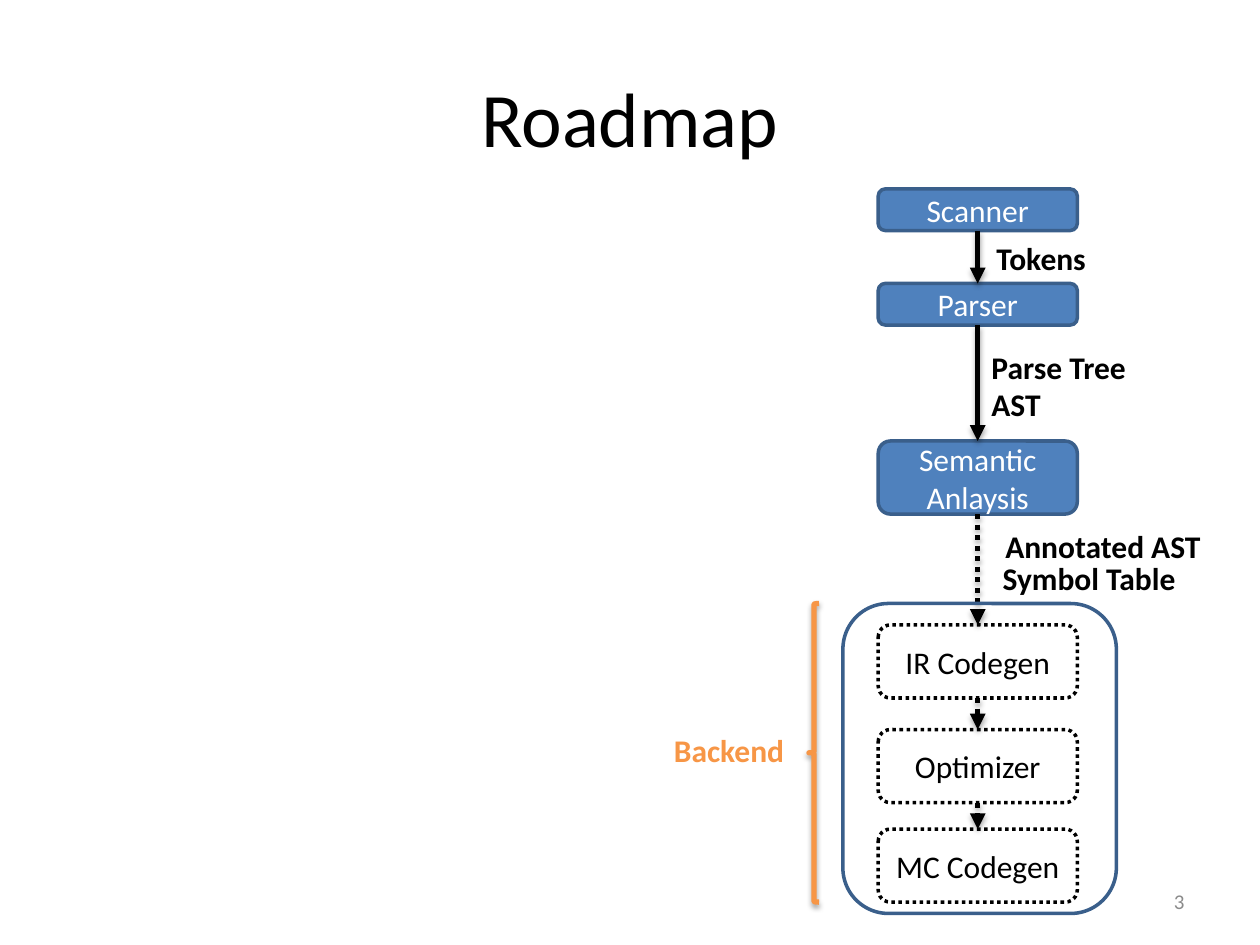
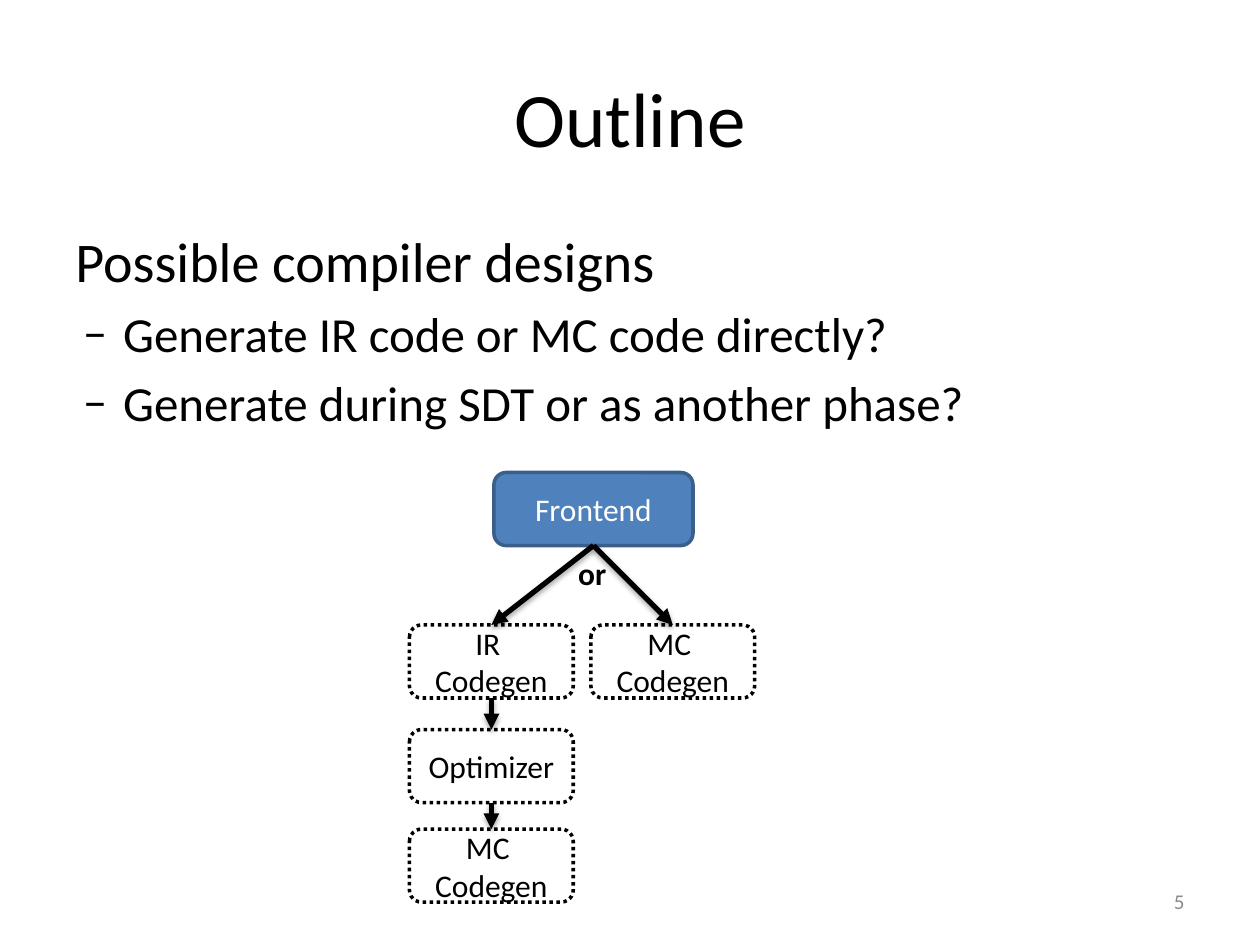
from lxml.etree import SubElement
from pptx import Presentation
from pptx.dml.color import RGBColor
from pptx.enum.dml import MSO_LINE
from pptx.enum.shapes import MSO_CONNECTOR, MSO_SHAPE
from pptx.enum.text import MSO_ANCHOR, MSO_AUTO_SIZE, PP_ALIGN
from pptx.oxml.ns import qn
from pptx.util import Inches, Pt

FONT = "Calibri"
BLACK, WHITE, GREY = "000000", "FFFFFF", "8B8B8B"
BLUE, DARK_BLUE, ORANGE = "4F81BD", "3A5F8B", "F79646"
BOX_HEIGHT, THIN_HEIGHT = 0.58, 0.33
IR_TOP, OPTIMIZER_TOP, MC_TOP = 4.96, 5.79, 6.58
BOTTOM_SIDE, TOP_SIDE = 2, 0

# Boxes: name -> (lines, left, top, width, height, is dotted)
# Arrows: (from, to, is dotted); labels: (lines, left, top, width, height, colour)
PAGES = [
    {
        "title": "Roadmap",
        "number": "3",
        "boxes": {
            "scanner": (["Scanner"], 6.97, 1.5, 1.58, THIN_HEIGHT, False),
            "parser": (["Parser"], 6.97, 2.25, 1.58, THIN_HEIGHT, False),
            "semantic": (["Semantic Anlaysis"], 6.97, 3.5, 1.58, BOX_HEIGHT, False),
            "ir": (["IR Codegen"], 6.97, IR_TOP, 1.58, BOX_HEIGHT, True),
            "optimizer": (["Optimizer"], 6.97, OPTIMIZER_TOP, 1.58, BOX_HEIGHT, True),
            "mc": (["MC Codegen"], 6.97, MC_TOP, 1.58, BOX_HEIGHT, True),
        },
        "arrows": [
            ("scanner", "parser", False),
            ("parser", "semantic", False),
            ("semantic", "ir", True),
            ("ir", "optimizer", True),
            ("optimizer", "mc", True),
        ],
        "labels": [
            (["Tokens"], 7.81, 1.85, 0.91, 0.4, BLACK),
            (["Parse Tree", "AST"], 7.77, 2.71, 1.27, 0.7, BLACK),
            (["Annotated AST"], 7.88, 4.13, 1.75, 0.4, BLACK),
            (["Symbol Table"], 7.86, 4.39, 1.57, 0.4, BLACK),
            (["Backend"], 5.25, 5.75, 1.12, 0.4, ORANGE),
        ],
    },
    {
        "title": "Outline",
        "number": "5",
        "boxes": {
            "frontend": (["Frontend"], 3.92, 3.75, 1.58, BOX_HEIGHT, False),
            "ir": (["IR ", "Codegen"], 3.25, IR_TOP, 1.3, BOX_HEIGHT, True),
            "optimizer": (["Optimizer"], 3.25, OPTIMIZER_TOP, 1.3, BOX_HEIGHT, True),
            "mc": (["MC ", "Codegen"], 3.25, MC_TOP, 1.3, BOX_HEIGHT, True),
            "direct mc": (["MC ", "Codegen"], 4.69, IR_TOP, 1.3, BOX_HEIGHT, True),
        },
        "arrows": [
            ("frontend", "ir", False),
            ("frontend", "direct mc", False),
            ("ir", "optimizer", False),
            ("optimizer", "mc", False),
        ],
        "labels": [(["or"], 4.49, 4.35, 0.42, 0.4, BLACK)],
    },
]


def write(shape, lines, size=18, color=BLACK, bold=False, align=PP_ALIGN.LEFT,
          anchor=MSO_ANCHOR.MIDDLE, wrap=True):
    """Fill the shape with one paragraph per line and return the paragraphs."""
    frame = shape.text_frame
    frame.word_wrap = wrap
    frame.vertical_anchor = anchor
    frame.text = "\n".join(lines)
    for para in frame.paragraphs:
        para.alignment = align
        for span in para.runs:
            span.font.name = FONT
            span.font.size = Pt(size)
            span.font.bold = bold
            span.font.color.rgb = RGBColor.from_string(color)
    return frame.paragraphs


def cast_shadow(shape):
    """Add a soft shadow straight below; call it once the line is set."""
    effects = SubElement(shape.element.spPr, qn("a:effectLst"))
    shadow = SubElement(effects, qn("a:outerShdw"), blurRad=str(Pt(3.1)),
                        dist=str(Pt(1.8)), dir="5400000", rotWithShape="0")
    tint = SubElement(shadow, qn("a:srgbClr"), val=BLACK)
    SubElement(tint, qn("a:alpha"), val="35000")


deck = Presentation()
deck.slide_width, deck.slide_height = Inches(10), Inches(7.5)

for content in PAGES:
    page = deck.slides.add_slide(deck.slide_layouts[6])
    title = page.shapes.add_textbox(Inches(0.5), Inches(0.3), Inches(9), Inches(1.25))
    write(title, [content["title"]], size=44, align=PP_ALIGN.CENTER)

    boxes = {}
    for name, (lines, left, top, width, height, dotted) in content["boxes"].items():
        box = page.shapes.add_shape(MSO_SHAPE.ROUNDED_RECTANGLE, Inches(left),
                                    Inches(top), Inches(width), Inches(height))
        box.shadow.inherit = False
        box.fill.solid()
        box.fill.fore_color.rgb = RGBColor.from_string(WHITE if dotted else BLUE)
        box.line.color.rgb = RGBColor.from_string(BLACK if dotted else DARK_BLUE)
        box.line.width = Pt(2)
        if dotted:
            box.line.dash_style = MSO_LINE.ROUND_DOT
        write(box, lines, color=BLACK if dotted else WHITE, align=PP_ALIGN.CENTER)
        boxes[name] = box

    for start, end, dotted in content["arrows"]:
        arrow = page.shapes.add_connector(MSO_CONNECTOR.STRAIGHT, 0, 0, 0, 0)
        arrow.begin_connect(boxes[start], BOTTOM_SIDE)
        arrow.end_connect(boxes[end], TOP_SIDE)
        arrow.line.color.rgb = RGBColor.from_string(BLACK)
        arrow.line.width = Pt(3)
        if dotted:
            arrow.line.dash_style = MSO_LINE.ROUND_DOT
        SubElement(arrow.element.spPr.find(qn("a:ln")), qn("a:tailEnd"), type="triangle")
        cast_shadow(arrow)

    for lines, left, top, width, height, color in content["labels"]:
        label = page.shapes.add_textbox(Inches(left), Inches(top), Inches(width), Inches(height))
        write(label, lines, color=color, bold=True, anchor=MSO_ANCHOR.TOP, wrap=False)
        label.text_frame.auto_size = MSO_AUTO_SIZE.SHAPE_TO_FIT_TEXT

    number = page.shapes.add_textbox(Inches(7.17), Inches(6.95), Inches(2.33), Inches(0.4))
    write(number, [content["number"]], size=12, color=GREY, align=PP_ALIGN.RIGHT)

roadmap, outline = deck.slides

# Backend frame and brace
backend = roadmap.shapes.add_shape(MSO_SHAPE.ROUNDED_RECTANGLE, Inches(6.69),
                                   Inches(4.79), Inches(2.17), Inches(2.46))
backend.shadow.inherit = False
backend.fill.background()
backend.line.color.rgb = RGBColor.from_string(DARK_BLUE)
backend.line.width = Pt(2)

brace = roadmap.shapes.add_shape(MSO_SHAPE.LEFT_BRACE, Inches(6.42), Inches(4.79),
                                 Inches(0.08), Inches(2.37))
brace.fill.background()
brace.line.color.rgb = RGBColor.from_string(ORANGE)
brace.line.width = Pt(3)
cast_shadow(brace)

# Design questions
body = outline.shapes.add_textbox(Inches(0.5), Inches(1.75), Inches(9), Inches(4.95))
heading, *questions = write(
    body,
    ["Possible compiler designs",
     "Generate IR code or MC code directly?",
     "Generate during SDT or as another phase?"],
    size=28, anchor=MSO_ANCHOR.TOP)
heading.space_before = Pt(6.4)
heading.runs[0].font.size = Pt(32)
for question in questions:
    question.level = 1
    question.space_before = Pt(5.6)
    properties = question._p.get_or_add_pPr()
    properties.set("marL", str(Inches(0.38)))
    properties.set("indent", str(Inches(-0.32)))
    SubElement(properties, qn("a:buFont"), typeface=FONT)
    SubElement(properties, qn("a:buChar"), char="–")

deck.save("out.pptx")
